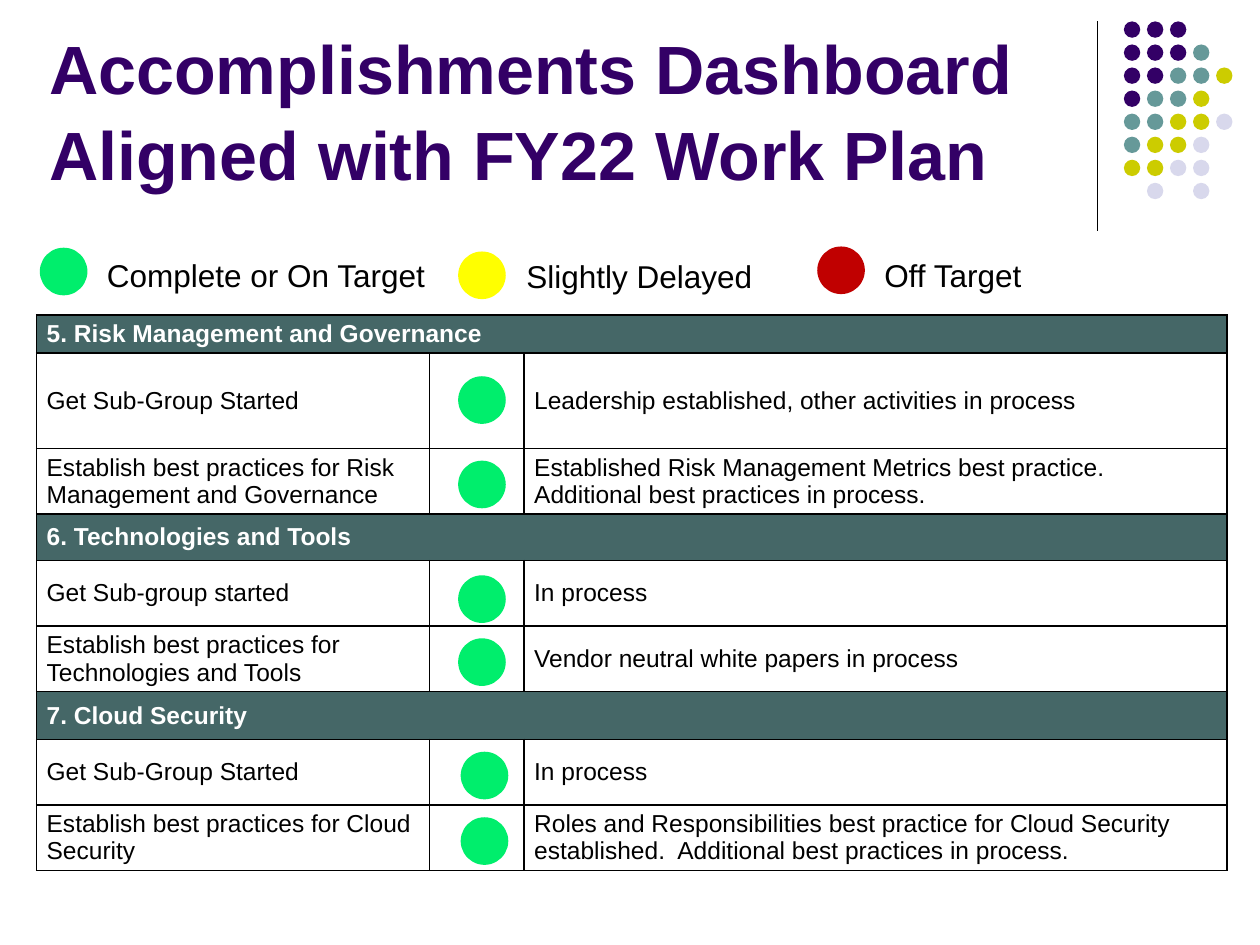
from lxml.etree import SubElement
from pptx import Presentation
from pptx.dml.color import RGBColor
from pptx.enum.shapes import MSO_CONNECTOR, MSO_SHAPE
from pptx.enum.text import MSO_ANCHOR, MSO_AUTO_SIZE, PP_ALIGN
from pptx.oxml.ns import qn
from pptx.util import Inches, Pt

FONT = "Arial"
COLORS = {
    "black": "000000", "white": "FFFFFF", "header": "456767",
    "purple": "330066", "teal": "669999", "olive": "CCCC00", "lavender": "D8D8EC",
    "complete": "00EE6C", "delayed": "FFFF00", "off": "C00000",
}
DOT_COLORS = {"P": "purple", "T": "teal", "O": "olive", "L": "lavender"}
DOT_ROWS = ["PPP", "PPPT", "PPTTO", "PTTO", "TTOOL", "TOOL", "OOLL", " L L"]

COLUMN_WIDTHS = [3.12, 0.75, 5.58]
# Row height, then a section heading alone or a task with its progress
ROWS = [
    (0.3, "5. Risk Management and Governance"),
    (0.76, "Get Sub-Group Started", "Leadership established, other activities in process"),
    (0.52, "Establish best practices for Risk Management and Governance",
     "Established Risk Management Metrics best practice.  "
     "Additional best practices in process."),
    (0.37, "6. Technologies and Tools"),
    (0.52, "Get Sub-group started", "In process"),
    (0.52, "Establish best practices for Technologies and Tools",
     "Vendor neutral white papers in process"),
    (0.38, "7. Cloud Security"),
    (0.52, "Get Sub-Group Started", "In process"),
    (0.52, "Establish best practices for Cloud Security",
     "Roles and Responsibilities best practice for Cloud Security established.  "
     "Additional best practices in process."),
]
# Circle left, circle top, colour, label left, label top, label width, label
LEGEND = [
    (0.33, 1.98, "complete", 0.75, 1.98, 2.75, "Complete or On Target"),
    (3.65, 2.01, "delayed", 4.08, 1.99, 2.01, "Slightly Delayed"),
    (6.5, 1.97, "off", 6.92, 1.98, 1.3, "Off Target"),
]
STATUS_CIRCLES = [(3.65, 3), (3.65, 3.67), (3.65, 4.58), (3.65, 5.08),
                  (3.67, 5.98), (3.67, 6.5)]


def rgb(name):
    return RGBColor.from_string(COLORS[name])


def add_run(para, text, size, color="black", bold=False):
    span = para.add_run()
    span.text = text
    span.font.name = FONT
    span.font.size = Pt(size)
    span.font.bold = bold
    span.font.color.rgb = rgb(color)


def add_circle(page, left, top, size, color, outlined=True):
    circle = page.shapes.add_shape(MSO_SHAPE.OVAL, Inches(left), Inches(top),
                                   Inches(size), Inches(size))
    circle.shadow.inherit = False
    circle.fill.solid()
    circle.fill.fore_color.rgb = rgb(color)
    if outlined:
        circle.line.color.rgb = rgb(color)
        circle.line.width = Pt(2)
    else:
        circle.line.fill.background()


def add_corner_decoration(page):
    rule = page.shapes.add_connector(MSO_CONNECTOR.STRAIGHT, Inches(8.71), Inches(0.17),
                                     Inches(8.71), Inches(1.83))
    rule.line.color.rgb = rgb("black")
    rule.line.width = Pt(0.75)
    SubElement(rule._element.spPr, qn("a:effectLst"))
    pitch = 0.183
    for row, letters in enumerate(DOT_ROWS):
        for column, letter in enumerate(letters):
            if letter in DOT_COLORS:
                add_circle(page, 8.92 + column * pitch, 0.17 + row * pitch, 0.13,
                           DOT_COLORS[letter], outlined=False)


def format_title(page):
    title = page.shapes.title
    title.left, title.top = Inches(0.29), Inches(1.08)
    title.width, title.height = Inches(8.62), Inches(0.51)
    frame = title.text_frame
    frame.word_wrap = True
    frame.auto_size = MSO_AUTO_SIZE.NONE
    frame.vertical_anchor = MSO_ANCHOR.BOTTOM
    para = frame.paragraphs[0]
    para.alignment = PP_ALIGN.LEFT
    para.line_spacing = 1.05
    add_run(para, "Accomplishments Dashboard Aligned with FY22 Work Plan",
            39, "purple", bold=True)


def add_label(page, left, top, width, text):
    box = page.shapes.add_textbox(Inches(left), Inches(top), Inches(width), Inches(0.4))
    box.text_frame.word_wrap = False
    box.text_frame.auto_size = MSO_AUTO_SIZE.SHAPE_TO_FIT_TEXT
    add_run(box.text_frame.paragraphs[0], text, 18)


def format_cell(cell, fill=None):
    """Set margins, anchor and borders; a cell without a fill is left clear."""
    cell.margin_left = cell.margin_right = Inches(0.08)
    cell.margin_top = cell.margin_bottom = Inches(0.04)
    cell.vertical_anchor = MSO_ANCHOR.MIDDLE
    properties = cell._tc.get_or_add_tcPr()
    for side in ("a:lnL", "a:lnR", "a:lnT", "a:lnB"):
        border = SubElement(properties, qn(side), w=str(Pt(1)))
        SubElement(SubElement(border, qn("a:solidFill")), qn("a:srgbClr"),
                   val=COLORS["black"])
    if fill:
        cell.fill.solid()
        cell.fill.fore_color.rgb = rgb(fill)
    else:
        cell.fill.background()


def add_work_plan(page):
    frame = page.shapes.add_table(
        len(ROWS), len(COLUMN_WIDTHS), Inches(0.29), Inches(2.5),
        Inches(sum(COLUMN_WIDTHS)), Inches(sum(row[0] for row in ROWS)))
    table = frame.table
    table.first_row = table.horz_banding = False
    for column, width in zip(table.columns, COLUMN_WIDTHS):
        column.width = Inches(width)
    for index, (height, name, *progress) in enumerate(ROWS):
        table.rows[index].height = Inches(height)
        cells = [table.cell(index, column) for column in range(len(COLUMN_WIDTHS))]
        is_heading = not progress
        for cell in cells:
            format_cell(cell, "header" if is_heading else None)
            cell.text_frame.paragraphs[0].font.size = Pt(14)
        if is_heading:
            cells[0].merge(cells[-1])
            add_run(cells[0].text_frame.paragraphs[0], name, 14, "white", bold=True)
        else:
            add_run(cells[0].text_frame.paragraphs[0], name, 14)
            add_run(cells[2].text_frame.paragraphs[0], progress[0], 14)


def main():
    deck = Presentation()
    deck.slide_width, deck.slide_height = Inches(10), Inches(7.5)
    page = deck.slides.add_slide(deck.slide_layouts[5])
    add_corner_decoration(page)
    format_title(page)
    add_work_plan(page)
    for left, top, color, label_left, label_top, label_width, text in LEGEND:
        add_circle(page, left, top, 0.35, color)
        add_label(page, label_left, label_top, label_width, text)
    for left, top in STATUS_CIRCLES:
        add_circle(page, left, top, 0.35, "complete")
    deck.save("out.pptx")


if __name__ == "__main__":
    main()
